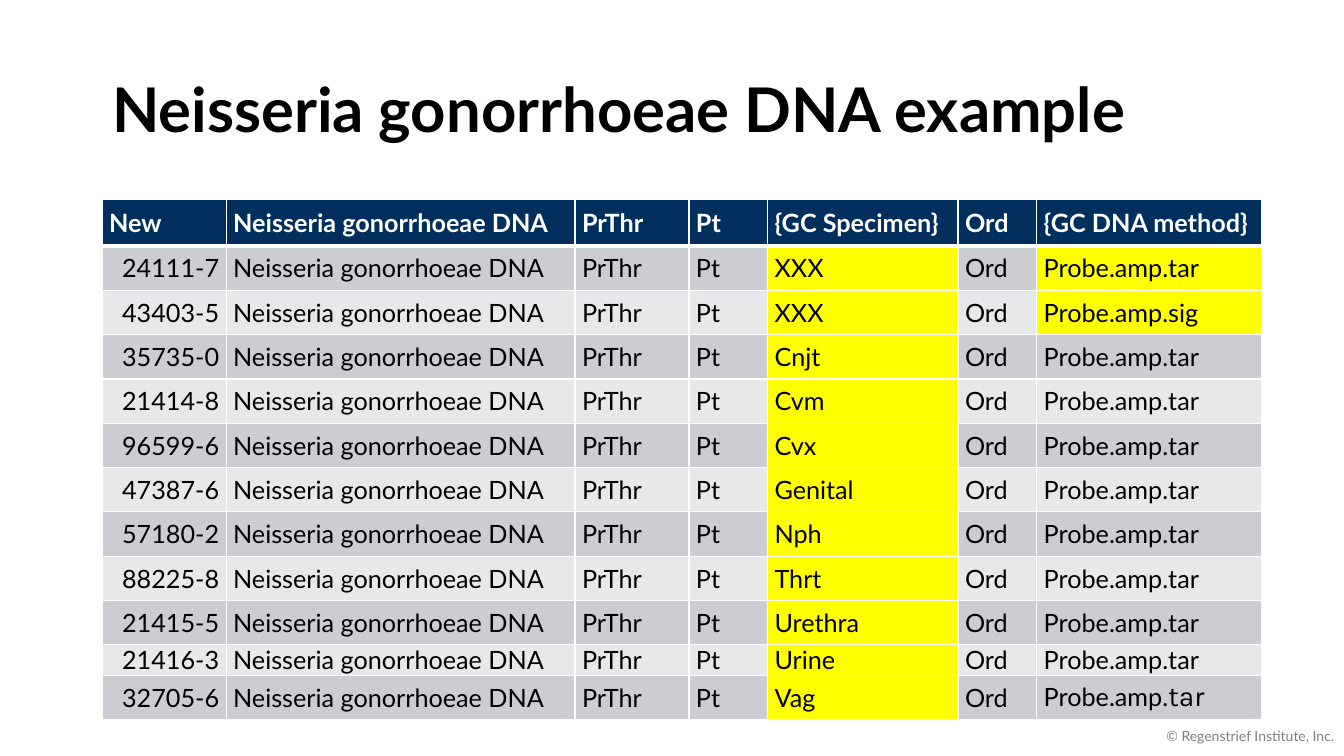
"""Build a slide with a table of terms for Neisseria gonorrhoeae DNA."""
from typing import Any, NamedTuple

from lxml import etree
from pptx import Presentation
from pptx import util as u
from pptx.dml.color import RGBColor
from pptx.enum import text
from pptx.oxml import ns

NAVY = RGBColor(0x00, 0x2E, 0x5D)
DARK = RGBColor(0xCC, 0xCD, 0xD2)
LIGHT = RGBColor(0xE7, 0xE8, 0xEA)
YELLOW = RGBColor(0xFF, 0xFF, 0x00)
WHITE = RGBColor(0xFF, 0xFF, 0xFF)
BLACK = RGBColor(0x00, 0x00, 0x00)
GRAY = RGBColor(0x80, 0x80, 0x80)

WIDE, HIGH = u.Inches(13.33), u.Inches(7.5)
FACE = "Lato"
TEST = "Neisseria gonorrhoeae DNA"
LEFT, RIGHT = text.PP_ALIGN.LEFT, text.PP_ALIGN.RIGHT
COLS = (1.23, 3.46, 1.13, 0.78, 1.89, 0.78, 2.23)
HEAD_ROW, TALL_ROW, SHORT_ROW = 0.46, 0.44, 0.3


class Style(NamedTuple):
    size: float
    color: RGBColor
    bold: bool = False
    face: str = FACE


class Label(NamedTuple):
    words: str
    x: float
    y: float
    w: float
    h: float
    style: Style
    align: text.PP_ALIGN = LEFT
    space: float = 1.0


class Term(NamedTuple):
    code: str
    site: str
    method: str = "Probe.amp.tar"
    marked: bool = False
    height: float = TALL_ROW


HEAD = Style(18, WHITE, True)
BODY = Style(18, BLACK)
TAIL = Style(20, BLACK, face="Karla")

LABELS = (
    Label("Neisseria gonorrhoeae DNA example", 0.076, 0.052, 0.863, 0.193,
          Style(44, BLACK, True), space=0.9),
    Label("© Regenstrief Institute, Inc.", 0.775, 0.947, 0.225, 0.053,
          Style(10, GRAY), RIGHT),
)
TITLES = ("New", TEST, "PrThr", "Pt", "{GC Specimen}", "Ord", "{GC DNA method}")
TERMS = (
    Term("24111-7", "XXX", marked=True),
    Term("43403-5", "XXX", "Probe.amp.sig", True),
    Term("35735-0", "Cnjt"),
    Term("21414-8", "Cvm"),
    Term("96599-6", "Cvx"),
    Term("47387-6", "Genital"),
    Term("57180-2", "Nph"),
    Term("88225-8", "Thrt"),
    Term("21415-5", "Urethra"),
    Term("21416-3", "Urine", height=SHORT_ROW),
    Term("32705-6", "Vag", "Probe.amp."),
)


def format_run(run: Any, style: Style) -> None:
    """Apply a text style to one run."""
    font = run.font
    font.name, font.size, font.bold = style.face, u.Pt(style.size), style.bold
    font.color.rgb = style.color


def draw_label(slide: Any, label: Label) -> None:
    """Draw a text box placed by shares of the slide."""
    box = slide.shapes.add_textbox(int(label.x * WIDE), int(label.y * HIGH),
                                   int(label.w * WIDE), int(label.h * HIGH))
    frame = box.text_frame
    frame.word_wrap = True
    frame.vertical_anchor = text.MSO_ANCHOR.MIDDLE
    para = frame.paragraphs[0]
    para.text, para.alignment, para.line_spacing = label.words, label.align, label.space
    format_run(para.runs[0], label.style)


def add_edge(cell: Any, side: str, width: float) -> None:
    """Give one side of a cell a white border."""
    props = cell._tc.get_or_add_tcPr()
    line = etree.SubElement(props, ns.qn(f"a:ln{side}"), w=str(u.Pt(width)))
    fill = etree.SubElement(line, ns.qn("a:solidFill"))
    etree.SubElement(fill, ns.qn("a:srgbClr"), val=str(WHITE))


def draw_cell(cell: Any, words: str, fill: RGBColor, style: Style,
              align: text.PP_ALIGN, top: float, base: float) -> None:
    """Fill, border and letter one table cell."""
    for side, width in zip("LRTB", (1, 1, top, base)):
        add_edge(cell, side, width)
    cell.fill.solid()
    cell.fill.fore_color.rgb = fill
    cell.margin_left = cell.margin_right = u.Inches(0.07)
    cell.margin_top = cell.margin_bottom = 0
    cell.vertical_anchor = text.MSO_ANCHOR.MIDDLE
    para = cell.text_frame.paragraphs[0]
    para.text, para.alignment = words, align
    format_run(para.runs[0], style)


def draw_table(slide: Any) -> None:
    """Draw the heading row and one row for each term."""
    heights = (HEAD_ROW, *(term.height for term in TERMS))
    frame = slide.shapes.add_table(len(heights), len(COLS), int(0.076 * WIDE),
                                   int(0.264 * HIGH), u.Inches(sum(COLS)),
                                   u.Inches(sum(heights)))
    table = frame.table
    for col, width in zip(table.columns, COLS):
        col.width = u.Inches(width)
    for row, height in zip(table.rows, heights):
        row.height = u.Inches(height)
    for col, words in enumerate(TITLES):
        draw_cell(table.cell(0, col), words, NAVY, HEAD, LEFT, 1, 3)
    for row, term in enumerate(TERMS, 1):
        band = DARK if row % 2 else LIGHT
        fills = [band] * 4 + [YELLOW, band, YELLOW if term.marked else band]
        line = (term.code, TEST, "PrThr", "Pt", term.site, "Ord", term.method)
        for col, (words, fill) in enumerate(zip(line, fills)):
            draw_cell(table.cell(row, col), words, fill, BODY,
                      LEFT if col else RIGHT, 3 if row == 1 else 1, 1)
    last = table.cell(len(TERMS), len(COLS) - 1).text_frame.paragraphs[0].add_run()
    last.text = "tar"
    format_run(last, TAIL)


def main() -> None:
    """Build and save the slide."""
    deck = Presentation()
    deck.slide_width, deck.slide_height = WIDE, HIGH
    slide = deck.slides.add_slide(deck.slide_layouts[6])
    draw_table(slide)
    for label in LABELS:
        draw_label(slide, label)
    deck.save("out.pptx")


if __name__ == "__main__":
    main()
